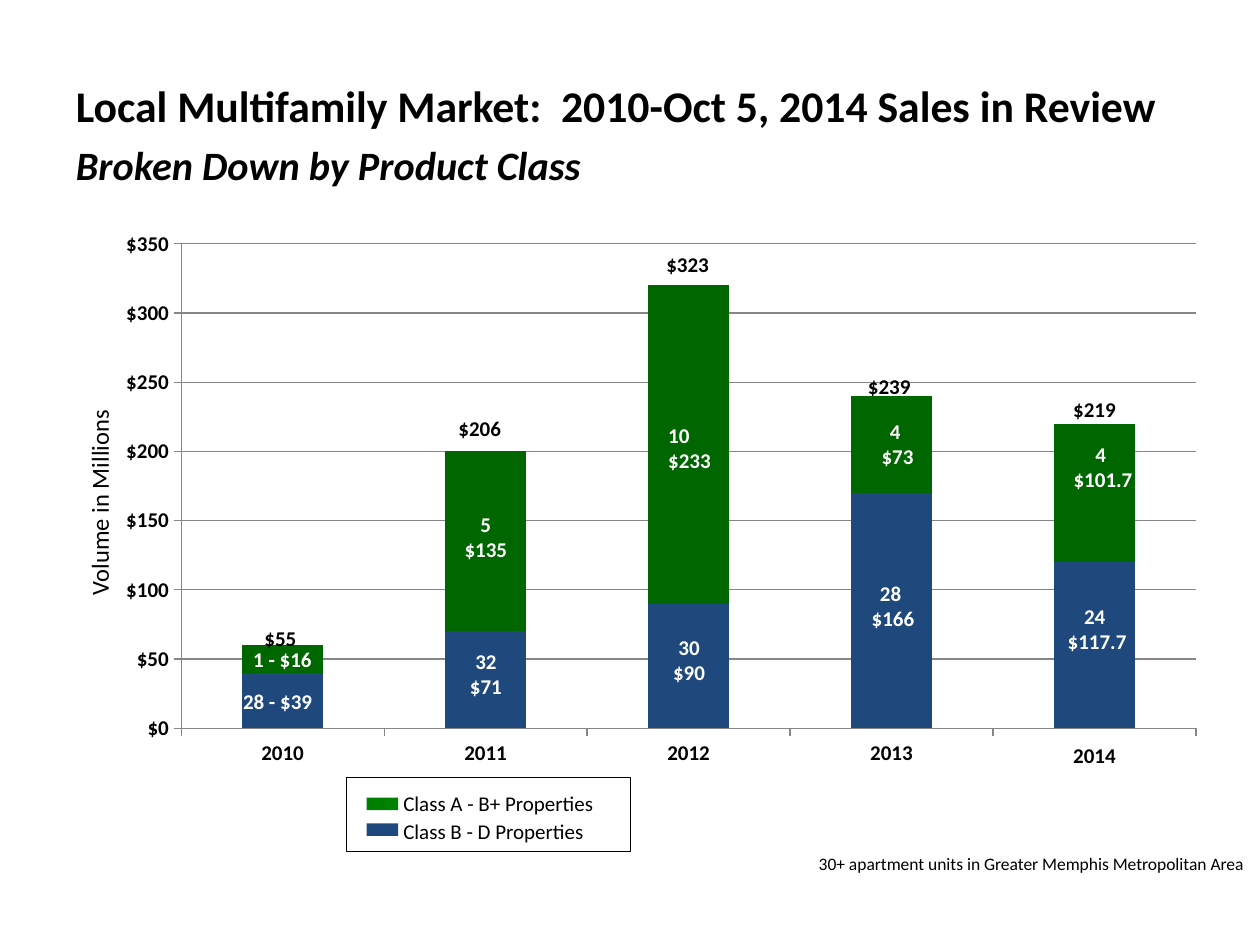
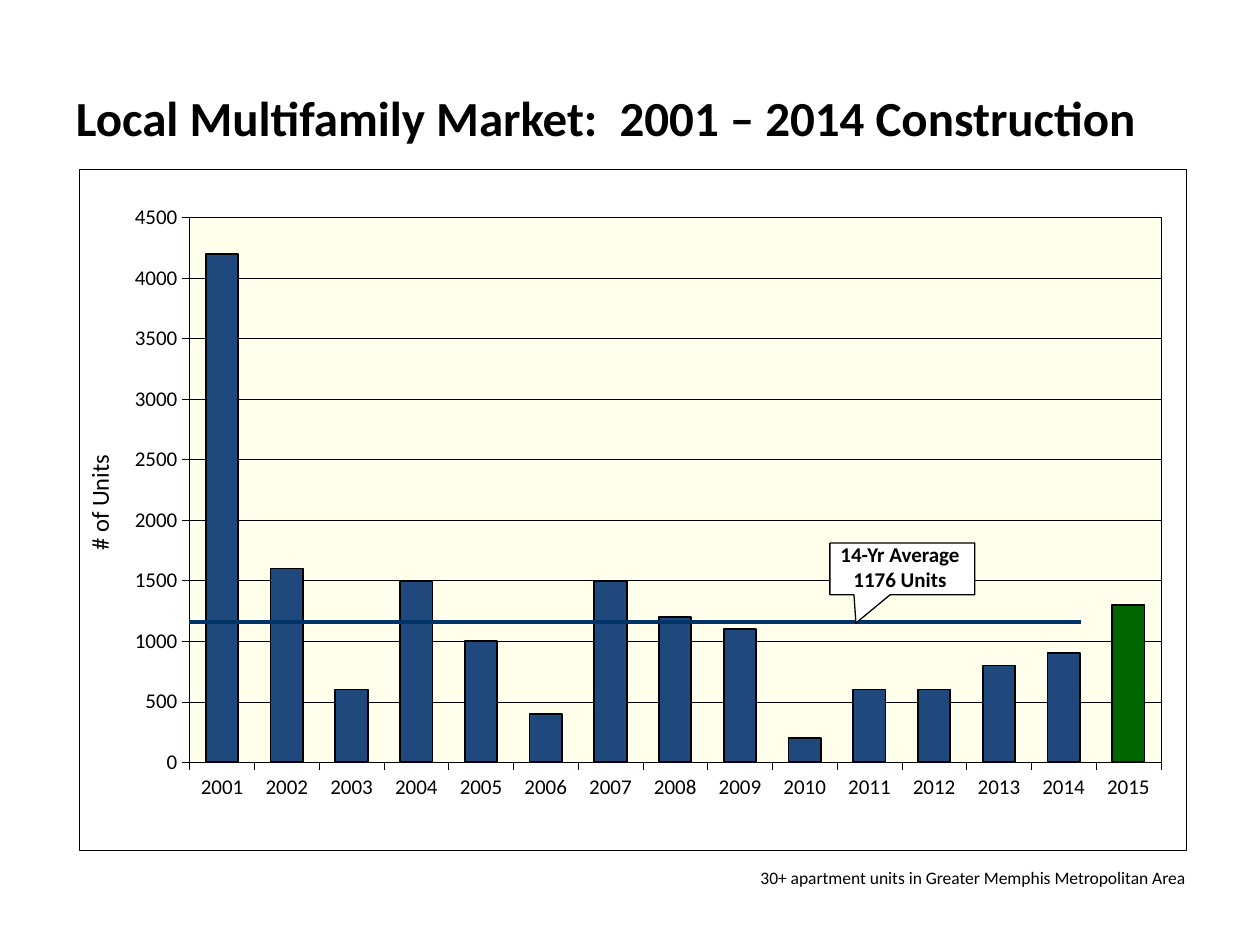
import dataclasses

import lxml.etree
import pptx
import pptx.chart.data
import pptx.dml.color
import pptx.enum.chart
import pptx.enum.shapes
import pptx.enum.text
import pptx.oxml
import pptx.oxml.ns
import pptx.util

Pt = pptx.util.Pt
qn = pptx.oxml.ns.qn
ALIGN = pptx.enum.text.PP_ALIGN
ANCHOR = pptx.enum.text.MSO_ANCHOR
SHAPE = pptx.enum.shapes.MSO_SHAPE


@dataclasses.dataclass(frozen=True)
class Theme:
    font: str = "Calibri"
    black: str = "000000"
    white: str = "FFFFFF"
    blue: str = "1F497D"
    green: str = "006600"
    legend_green: str = "008000"
    average_blue: str = "003366"
    cream: str = "FFFFEB"
    grid_grey: str = "868686"
    note_size: float = 10
    label_size: float = 12
    axis_title_size: float = 14
    subtitle_size: float = 23
    sales_title_size: float = 25
    title_size: float = 28


THEME = Theme()
NOTE = "30+ apartment units in Greater Memphis Metropolitan Area"
AXIS_TITLE_BOX = (-52.2, 275, 218.2, 24.5)


# Shared helpers
def rgb(color):
    return pptx.dml.color.RGBColor.from_string(color)


def style_line(line, color, width):
    line.color.rgb = rgb(color)
    line.width = Pt(width)


def write_text(frame, text, size=THEME.label_size, color=THEME.black, bold=False,
               italic=False, align=ALIGN.LEFT, anchor=ANCHOR.TOP, wrap=True):
    """Fill a text frame, one paragraph per line of text."""
    frame.word_wrap = wrap
    frame.vertical_anchor = anchor
    frame.text = text
    for paragraph in frame.paragraphs:
        paragraph.alignment = align
        font = paragraph.font
        font.name, font.size, font.color.rgb = THEME.font, Pt(size), rgb(color)
        font.bold, font.italic = bold, italic


def add_text(slide, box, text, **text_format):
    shape = slide.shapes.add_textbox(*map(Pt, box))
    write_text(shape.text_frame, text, **text_format)
    return shape


def add_box(slide, kind, box, fill=None, line=None, width=0.5):
    shape = slide.shapes.add_shape(kind, *map(Pt, box))
    shape.shadow.inherit = False
    if fill:
        shape.fill.solid()
        shape.fill.fore_color.rgb = rgb(fill)
    else:
        shape.fill.background()
    if line:
        style_line(shape.line, line, width)
    else:
        shape.line.fill.background()
    return shape


# Titles, axis captions and notes
def add_title(slide, box, title, size, subtitle=None):
    text = f"{title}\n{subtitle}" if subtitle else title
    shape = add_text(slide, box, text, size=size, bold=True, anchor=ANCHOR.MIDDLE)
    if subtitle:
        paragraph = shape.text_frame.paragraphs[1]
        paragraph.font.size = Pt(THEME.subtitle_size)
        paragraph.font.italic = True
        paragraph.line_spacing = Pt(32.5)


def add_axis_title(slide, box, text):
    shape = add_text(slide, box, text, size=THEME.axis_title_size, align=ALIGN.CENTER)
    shape.rotation = 270


def add_note(slide, box):
    add_text(slide, box, NOTE, size=THEME.note_size, align=ALIGN.RIGHT)


# Charts
def shape_properties(fill, line, width):
    fill_xml = f'<a:solidFill><a:srgbClr val="{fill}"/></a:solidFill>' if fill else "<a:noFill/>"
    return pptx.oxml.parse_xml(
        f'<c:spPr {pptx.oxml.ns.nsdecls("c", "a")}>{fill_xml}'
        f'<a:ln w="{Pt(width)}"><a:solidFill><a:srgbClr val="{line}"/></a:solidFill></a:ln>'
        "</c:spPr>")


def set_plot_layout(plot_area, layout):
    for old_layout in plot_area.findall(qn("c:layout")):
        plot_area.remove(old_layout)
    element = lxml.etree.Element(qn("c:layout"))
    manual = lxml.etree.SubElement(element, qn("c:manualLayout"))
    settings = [("layoutTarget", "inner"), ("xMode", "edge"), ("yMode", "edge"),
                *zip("xywh", layout)]
    for name, value in settings:
        lxml.etree.SubElement(manual, qn(f"c:{name}")).set("val", str(value))
    plot_area.insert(0, element)


def add_stacked_chart(slide, box, categories, series, colors, layout, maximum, step,
                      number_format, gap, line_color, line_width, bold=False):
    data = pptx.chart.data.CategoryChartData()
    data.categories = categories
    for name, values in series.items():
        data.add_series(name, values)
    chart = slide.shapes.add_chart(
        pptx.enum.chart.XL_CHART_TYPE.COLUMN_STACKED, *map(Pt, box), data).chart
    chart.has_title = chart.has_legend = False
    chart.font.name, chart.font.size = THEME.font, Pt(THEME.label_size)
    chart.font.color.rgb, chart.font.bold = rgb(THEME.black), bold

    plot = chart.plots[0]
    plot.gap_width, plot.overlap, plot.vary_by_categories = gap, 100, False
    for one_series, color in zip(plot.series, colors):
        one_series.format.fill.solid()
        one_series.format.fill.fore_color.rgb = rgb(color)

    value_axis = chart.value_axis
    value_axis.minimum_scale, value_axis.maximum_scale = 0, maximum
    value_axis.major_unit = step
    value_axis.has_major_gridlines = True
    value_axis.tick_labels.number_format = number_format
    value_axis.tick_labels.number_format_is_linked = False
    for axis in (value_axis, chart.category_axis):
        axis.major_tick_mark = pptx.enum.chart.XL_TICK_MARK.OUTSIDE
        style_line(axis.format.line, line_color, line_width)
    style_line(value_axis.major_gridlines.format.line, line_color, line_width)
    set_plot_layout(chart._chartSpace.find(f".//{qn('c:plotArea')}"), layout)
    return chart


# Sales slide: chart with hand-placed labels
def add_sales_chart(slide, box):
    add_stacked_chart(
        slide, box, ["2010", "2011", "2012", "2013", ""],
        {"Class B - D Properties": [40, 70, 90, 170, 120],
         "Class A - B+ Properties": [20, 130, 230, 70, 100]},
        [THEME.blue, THEME.green], (0.07, 0.042, 0.911, 0.87), 350, 50,
        "\\$#,##0", 150, THEME.grid_grey, 0.75, bold=True)

    # Left, top and width of each label inside the chart box
    outside_labels = [
        ("$55", 85, 228.2, 42.5), ("$206", 195.9, 108, 39.6), ("$323", 314.7, 14.4, 39.6),
        ("$239", 429.9, 83.8, 39.6), ("$219", 547.2, 97.2, 39.6),
        ("2014", 547.2, 294.8, 39.6)]
    column_labels = [
        ("28 - $39", 72.3, 264.2, 54.7), ("1 - $16", 78.3, 239.8, 48.2),
        ("32\n$71", 202.2, 241.2, 33), ("5\n$135", 198.8, 162.7, 39.6),
        ("30\n$90", 318.3, 233, 33), ("10\n$233", 315.7, 111.8, 39.6),
        ("28 \n$166", 429.7, 202.3, 43.2), ("4 \n$73", 420.8, 109.4, 66.2),
        ("24 \n$117.7", 534.8, 215.5, 66.2), ("4 \n$101.7", 538.2, 122.9, 66.2)]
    for labels, color in ((outside_labels, THEME.black), (column_labels, THEME.white)):
        for text, left, top, width in labels:
            left_aligned = color == THEME.black or text.startswith("10")
            height = 36.7 if "\n" in text else 21.6
            add_text(slide, (box[0] + left, box[1] + top, width, height), text,
                     color=color, bold=True, wrap=text == "$55",
                     align=ALIGN.LEFT if left_aligned else ALIGN.CENTER)


def add_sales_legend(slide, box):
    left, top, _, _ = box
    entries = [("Class A - B+ Properties", THEME.legend_green),
               ("Class B - D Properties", THEME.blue)]
    for index, (text, color) in enumerate(entries):
        offset = index * 15.6
        add_box(slide, SHAPE.RECTANGLE, (left + 11.5, top + 11.8 + offset * 0.94, 18, 7.2),
                fill=color)
        add_text(slide, (left + 25.4, top + 1.8 + offset, 130, 26.6), text,
                 anchor=ANCHOR.MIDDLE)
    add_box(slide, SHAPE.RECTANGLE, box, line=THEME.black)


def build_sales_slide(slide):
    add_sales_chart(slide, (59, 126, 636.5, 318.2))
    add_title(slide, (36.3, 21.4, 648, 110.2),
              "Local Multifamily Market:  2010-Oct 5, 2014 Sales in Review",
              THEME.sales_title_size, "Broken Down by Product Class")
    add_axis_title(slide, AXIS_TITLE_BOX, "Volume in Millions")
    add_sales_legend(slide, (198, 444, 162, 42.5))
    add_note(slide, (385, 483.8, 332.6, 19.4))


# Construction slide: chart with average line
def add_construction_chart(slide, box):
    units = [4200, 1600, 600, 1500, 1000, 400, 1500, 1200, 1100, 200, 600, 600, 800, 900,
             1300]
    chart = add_stacked_chart(
        slide, box, [str(year) for year in range(2001, 2016)], {"Units": units},
        [THEME.blue], (0.1, 0.071, 0.877, 0.8), 4500, 500, "General", 100,
        THEME.black, 0.25)
    columns = chart.plots[0].series[0]
    style_line(columns.format.line, THEME.black, 1)
    latest = columns.points[len(units) - 1].format
    latest.fill.solid()
    latest.fill.fore_color.rgb = rgb(THEME.green)
    style_line(latest.line, THEME.black, 1)

    # Plot background and chart border
    chart_space = chart._chartSpace
    chart_space.find(f".//{qn('c:plotArea')}").append(
        shape_properties(THEME.cream, THEME.black, 0.25))
    chart_space.find(qn("c:chart")).addnext(shape_properties(None, THEME.black, 0.25))


def add_average(slide, box):
    left, top, width, _ = box
    line = slide.shapes.add_connector(
        pptx.enum.shapes.MSO_CONNECTOR.STRAIGHT,
        *map(Pt, (left, top, left + width, top)))
    style_line(line.line, THEME.average_blue, 2.25)
    lxml.etree.SubElement(line._element.spPr, qn("a:effectLst"))

    callout = add_box(slide, SHAPE.RECTANGULAR_CALLOUT,
                      (left + 366.2, top - 45.4, 82.8, 29.5),
                      fill=THEME.white, line=THEME.black, width=0.75)
    callout.adjustments[0], callout.adjustments[1] = -0.32, 1.05
    frame = callout.text_frame
    frame.margin_left = frame.margin_top = 0
    frame.margin_right = frame.margin_bottom = Pt(2.6)
    write_text(frame, "14-Yr Average\n1176 Units", bold=True, align=ALIGN.CENTER,
               anchor=ANCHOR.MIDDLE, wrap=False)


def build_construction_slide(slide):
    add_construction_chart(slide, (45, 96.5, 633, 389.5))
    add_title(slide, (36.3, 21.6, 648, 90),
              "Local Multifamily Market:  2001 – 2014 Construction", THEME.title_size)
    add_average(slide, (108, 355.7, 509.8, 0))
    add_axis_title(slide, AXIS_TITLE_BOX, "# of Units")
    add_note(slide, (351.7, 491.8, 332.6, 19.4))


def main():
    presentation = pptx.Presentation()
    presentation.slide_width, presentation.slide_height = Pt(720), Pt(540)
    for build in (build_sales_slide, build_construction_slide):
        build(presentation.slides.add_slide(presentation.slide_layouts[6]))
    presentation.save("out.pptx")


if __name__ == "__main__":
    main()
